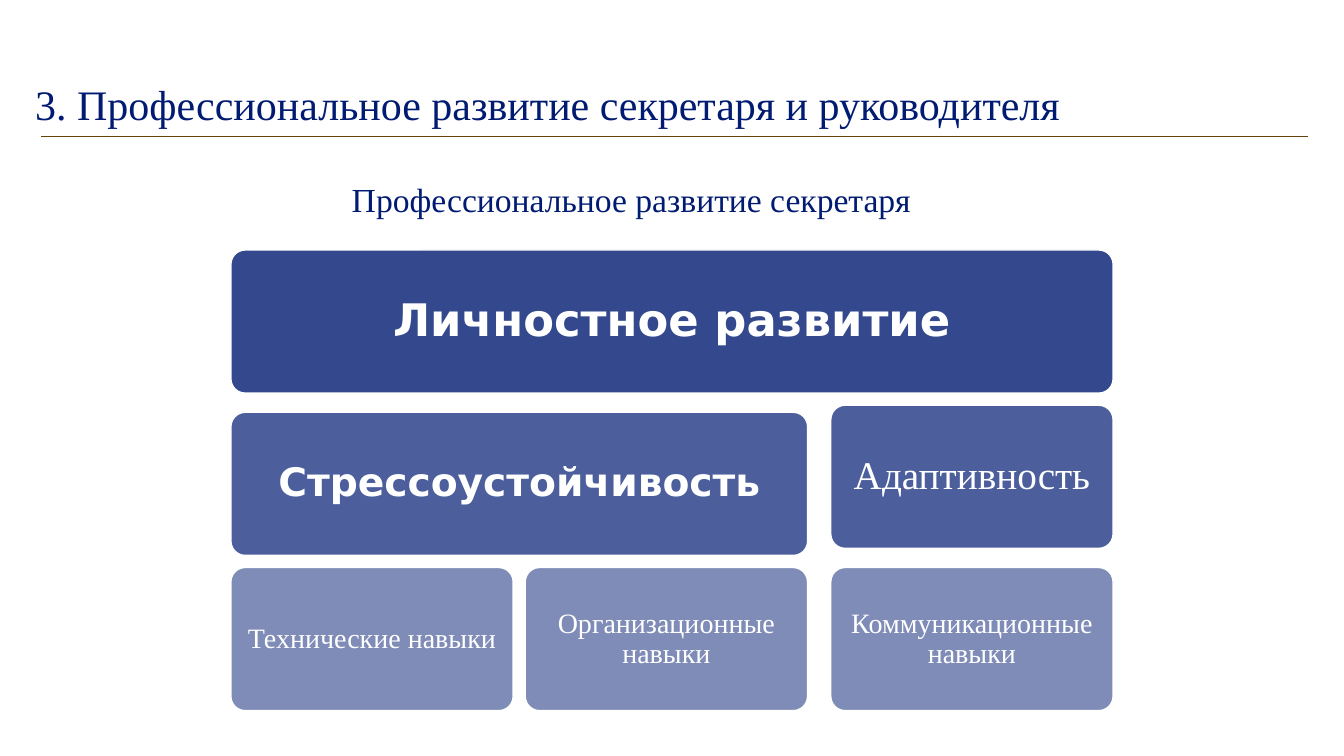
from pptx import Presentation
from pptx.dml.color import RGBColor
from pptx.enum.shapes import MSO_CONNECTOR, MSO_SHAPE
from pptx.enum.text import MSO_ANCHOR, PP_ALIGN
from pptx.oxml.ns import qn
from pptx.util import Inches, Pt
from lxml.etree import SubElement

# Content
TITLE = "3. Профессиональное развитие секретаря и руководителя"
SUBTITLE = "Профессиональное развитие секретаря"
# text, level, first column, columns spanned, top, bold sans
BLOCKS = [
    ("Личностное развитие", 0, 0, 3, 2.48, True),
    ("Стрессоустойчивость", 1, 0, 2, 4.09, True),
    ("Адаптивность", 1, 2, 1, 4.02, False),
    ("Технические навыки", 2, 0, 1, 5.63, False),
    ("Организационные навыки", 2, 1, 1, 5.63, False),
    ("Коммуникационные навыки", 2, 2, 1, 5.63, False),
]

# Theme
THEME = {
    "navy": RGBColor.from_string("001B71"),
    "white": RGBColor.from_string("FFFFFF"),
    "rule": RGBColor.from_string("67430C"),
    "serif": "Times New Roman",
    "sans": "DejaVu Sans",
    "title": 30,
    "subtitle": 24,
    # per level: opacity in percent, type size, text inset
    "levels": [(80, 32, 0.13), (70, 28, 0.12), (50, 20, 0.08)],
}

# Block grid
COLUMN_LEFTS = [2.29, 5.21, 8.24]
COLUMN_W, BLOCK_H = 2.8, 1.42


def write(tf, text, size, color, font=THEME["serif"], bold=False,
          align=PP_ALIGN.LEFT, anchor=MSO_ANCHOR.TOP, spacing=1.0):
    tf.word_wrap = True
    tf.vertical_anchor = anchor
    p = tf.paragraphs[0]
    p.alignment, p.line_spacing = align, spacing
    r = p.add_run()
    r.text = text
    r.font.name, r.font.size, r.font.bold = font, Pt(size), bold
    r.font.color.rgb = color


def add_block(slide, text, level, column, span, top, strong):
    opacity, size, inset = THEME["levels"][level]
    left = COLUMN_LEFTS[column]
    width = COLUMN_LEFTS[column + span - 1] + COLUMN_W - left
    s = slide.shapes.add_shape(MSO_SHAPE.ROUNDED_RECTANGLE, Inches(left),
                               Inches(top), Inches(width), Inches(BLOCK_H))
    s.adjustments[0] = 0.1
    s.shadow.inherit = False
    s.fill.solid()
    s.fill.fore_color.rgb = THEME["navy"]
    color = s.fill._xPr.find(qn("a:solidFill"))[0]
    SubElement(color, qn("a:alpha")).set("val", str(opacity * 1000))
    s.line.color.rgb = THEME["white"]
    s.line.width = Pt(1)
    tf = s.text_frame
    tf.margin_left = tf.margin_right = Inches(inset)
    tf.margin_top = tf.margin_bottom = Inches(inset)
    write(tf, text, size, THEME["white"], bold=strong,
          font=THEME["sans" if strong else "serif"],
          align=PP_ALIGN.CENTER, anchor=MSO_ANCHOR.MIDDLE, spacing=0.9)


def main():
    prs = Presentation()
    prs.slide_width, prs.slide_height = Inches(13.33), Inches(7.5)
    slide = prs.slides.add_slide(prs.slide_layouts[6])

    # Rule under the title
    rule = slide.shapes.add_connector(MSO_CONNECTOR.STRAIGHT, Inches(0.41),
                                      Inches(1.35), Inches(12.97), Inches(1.35))
    rule.line.color.rgb = THEME["rule"]
    rule.line.width = Pt(0.5)
    SubElement(rule._element.spPr, qn("a:effectLst"))

    # Headings
    for text, role, box in [(TITLE, "title", (0.25, 0.73, 12.34, 0.61)),
                            (SUBTITLE, "subtitle", (3.39, 1.73, 8.21, 0.5))]:
        s = slide.shapes.add_textbox(*map(Inches, box))
        write(s.text_frame, text, THEME[role], THEME["navy"])

    # Blocks
    for block in BLOCKS:
        add_block(slide, *block)

    prs.save("out.pptx")


if __name__ == "__main__":
    main()
